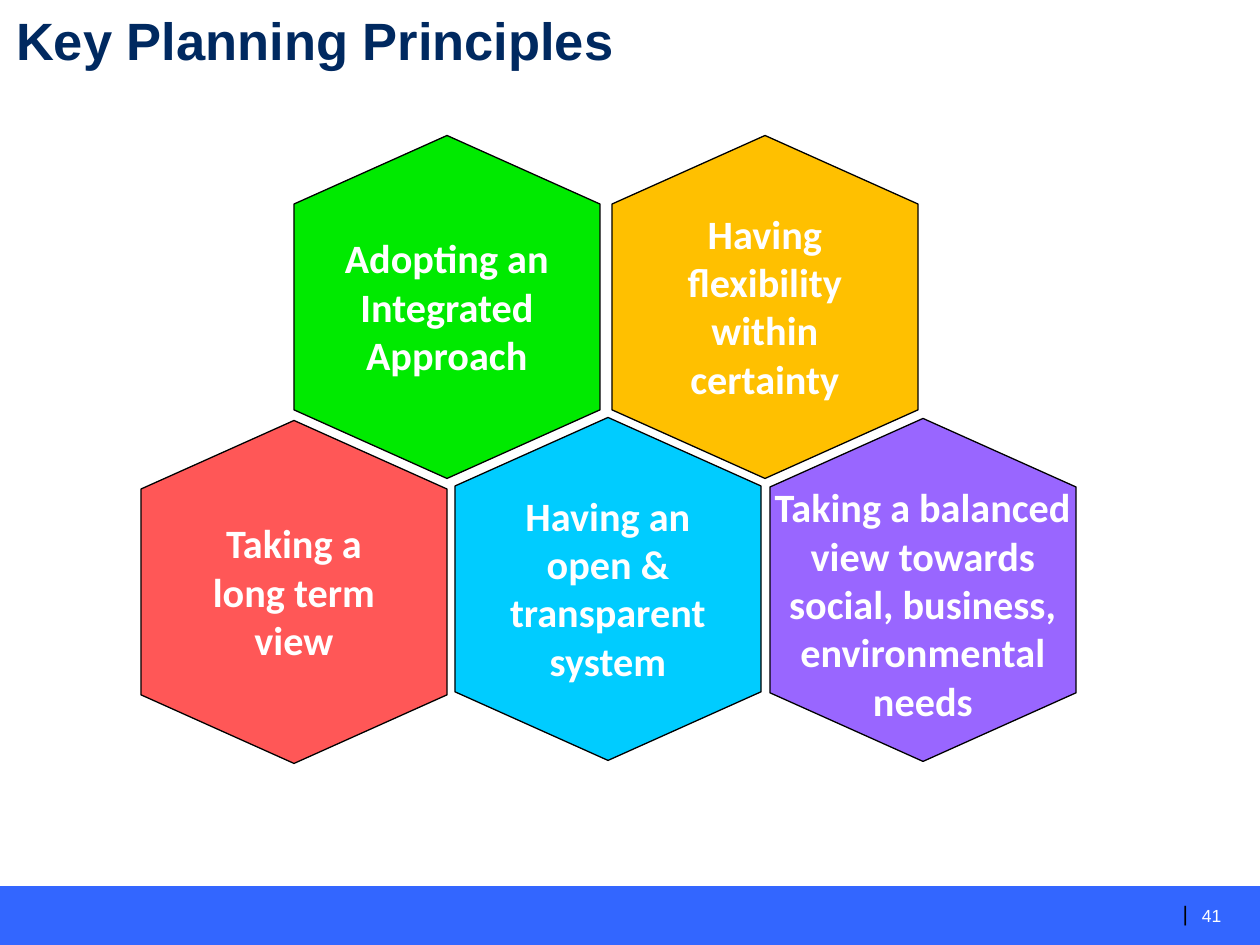
import dataclasses

import pptx
import pptx.dml.color
import pptx.enum.shapes
import pptx.enum.text
import pptx.util

EMU_PER_PX = 914400 / 126
ALIGN = pptx.enum.text.PP_ALIGN
ANCHOR = pptx.enum.text.MSO_ANCHOR
SHAPE = pptx.enum.shapes.MSO_SHAPE


@dataclasses.dataclass(frozen=True)
class Theme:
    heading_font: str = "Arial"
    label_font: str = "Calibri"
    title_size: int = 30
    label_size: int = 23
    separator_size: int = 12
    number_size: int = 10
    navy: str = "002960"
    blue: str = "3366FF"
    black: str = "000000"
    white: str = "FFFFFF"
    green: str = "00EA00"
    amber: str = "FFC000"
    red: str = "FF5757"
    cyan: str = "00CCFF"
    purple: str = "9966FF"


@dataclasses.dataclass(frozen=True)
class Principle:
    text: str
    fill: str
    center_x: int
    center_y: int
    label_width: int
    lines: int
    label_drop: int = 0


THEME = Theme()
HEX_LENGTH, HEX_BREADTH = 343, 306
LINE_HEIGHT, LABEL_PADDING = 49, 12

PRINCIPLES = (
    Principle("Adopting an Integrated Approach", THEME.green, 447, 307, 276, 3),
    Principle("Having flexibility within certainty", THEME.amber, 765, 307, 203, 4),
    Principle("Taking a long term view", THEME.red, 294, 592, 203, 3),
    Principle("Having an open & transparent system", THEME.cyan, 608, 589, 272, 4),
    Principle("Taking a balanced view towards social, business, environmental needs",
              THEME.purple, 923, 590, 341, 5, label_drop=15),
)


def px(length: float) -> pptx.util.Emu:
    return pptx.util.Emu(round(length * EMU_PER_PX))


def color(value: str) -> pptx.dml.color.RGBColor:
    return pptx.dml.color.RGBColor.from_string(value)


def write(box, text: str, *, size: int, ink: str, font: str = THEME.heading_font,
          bold: bool = False, align=ALIGN.LEFT, anchor=ANCHOR.TOP,
          wrap: bool = True, inset: bool = False) -> None:
    """Put one formatted paragraph into a text box or placeholder."""
    frame = box.text_frame
    frame.auto_size = pptx.enum.text.MSO_AUTO_SIZE.NONE
    frame.word_wrap = wrap
    frame.vertical_anchor = anchor
    if not inset:
        frame.margin_left = frame.margin_right = 0
        frame.margin_top = frame.margin_bottom = 0
    para = frame.paragraphs[0]
    para.alignment = align
    span = para.add_run()
    span.text = text
    span.font.name = font
    span.font.size = pptx.util.Pt(size)
    span.font.bold = bold
    span.font.color.rgb = color(ink)


def add_box(page, left: float, top: float, width: int, height: int):
    return page.shapes.add_textbox(px(left), px(top), px(width), px(height))


def add_filled(page, kind, left: float, top: float, width: int, height: int, fill: str):
    shape = page.shapes.add_shape(kind, px(left), px(top), px(width), px(height))
    shape.shadow.inherit = False
    shape.fill.solid()
    shape.fill.fore_color.rgb = color(fill)
    return shape


def add_hexagon(page, item: Principle) -> None:
    shape = add_filled(page, SHAPE.FLOWCHART_PREPARATION,
                       item.center_x - HEX_LENGTH / 2, item.center_y - HEX_BREADTH / 2,
                       HEX_LENGTH, HEX_BREADTH, item.fill)
    shape.rotation = 90
    shape.line.color.rgb = color(THEME.black)
    shape.line.width = pptx.util.Pt(0.75)


def add_label(page, item: Principle) -> None:
    height = item.lines * LINE_HEIGHT + LABEL_PADDING
    box = add_box(page, item.center_x - item.label_width / 2,
                  item.center_y + item.label_drop - height / 2,
                  item.label_width, height)
    write(box, item.text, size=THEME.label_size, ink=THEME.white, font=THEME.label_font,
          bold=True, align=ALIGN.CENTER, inset=True)


def main() -> None:
    deck = pptx.Presentation()
    deck.slide_width, deck.slide_height = px(1260), px(945)
    page = deck.slides.add_slide(deck.slide_layouts[5])

    # Footer band with the page number
    band = add_filled(page, SHAPE.RECTANGLE, 0, 886, 1260, 59, THEME.blue)
    band.line.fill.background()
    write(add_box(page, 1183, 900, 5, 26), "|", size=THEME.separator_size,
          ink=THEME.black, align=ALIGN.RIGHT, anchor=ANCHOR.MIDDLE, wrap=False)
    write(add_box(page, 1202, 905, 28, 21), "41", size=THEME.number_size,
          ink=THEME.white, wrap=False)

    # Title
    title = page.shapes.title
    title.left, title.top, title.width, title.height = px(16), px(8), px(864), px(63)
    write(title, "Key Planning Principles", size=THEME.title_size, ink=THEME.navy, bold=True)

    # Honeycomb of principles, labels above all hexagons
    for item in PRINCIPLES:
        add_hexagon(page, item)
    for item in PRINCIPLES:
        add_label(page, item)

    deck.save("out.pptx")


if __name__ == "__main__":
    main()
